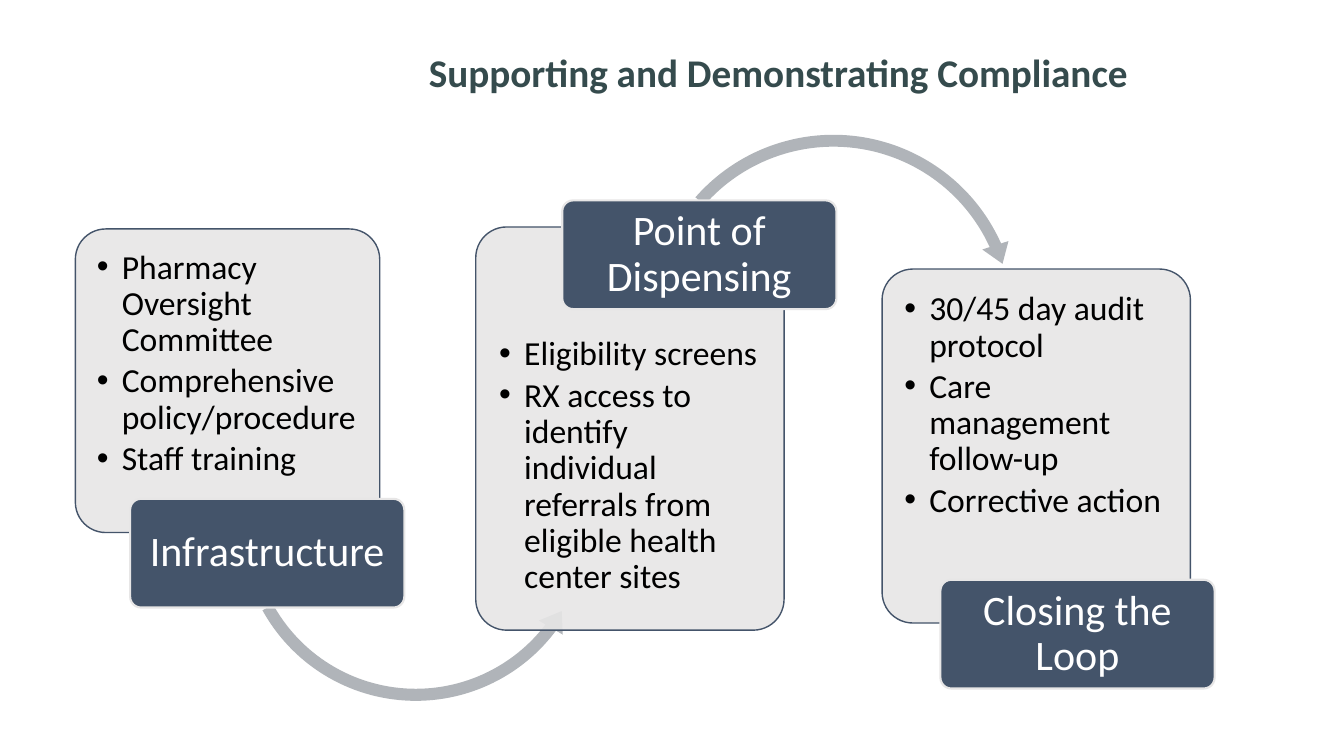
from lxml.etree import SubElement
from pptx import Presentation
from pptx.dml.color import RGBColor
from pptx.enum.shapes import MSO_SHAPE
from pptx.enum.text import MSO_ANCHOR, MSO_AUTO_SIZE, PP_ALIGN
from pptx.oxml.ns import qn
from pptx.util import Cm, Pt

COMPARISON_LAYOUT = 4


def color(hex_code):
    return RGBColor.from_string(hex_code)


def write(paragraph, text, *, size, ink, bold=False, align=PP_ALIGN.LEFT, after=0, bullet=None):
    properties = paragraph._p.get_or_add_pPr()
    if bullet:
        properties.set("marL", str(Cm(0.63)))
        properties.set("indent", str(-Cm(0.63)))
        SubElement(properties, qn("a:buChar")).set("char", bullet)
    paragraph.alignment = align
    paragraph.line_spacing = 0.9
    paragraph.space_before = Pt(0)
    paragraph.space_after = Pt(after)
    run = paragraph.add_run()
    run.text = text
    run.font.name = "Calibri"
    run.font.size = Pt(size)
    run.font.bold = bold
    run.font.color.rgb = color(ink)


class ComplianceSlide:
    navy = "44546A"
    pale = "E7E6E6"
    gray = "B0B4B9"
    heading = "354B4D"

    def __init__(self, deck):
        self.slide = deck.slides.add_slide(deck.slide_layouts[COMPARISON_LAYOUT])
        self.shapes = self.slide.shapes
        self.list_slots = [p for p in self.slide.placeholders if p.placeholder_format.idx in (1, 2, 3, 4)]

    def place(self, holder, box, anchor):
        holder.left, holder.top, holder.width, holder.height = map(Cm, box)
        frame = holder.text_frame
        frame.word_wrap = True
        frame.auto_size = MSO_AUTO_SIZE.NONE
        frame.vertical_anchor = anchor
        return frame

    def title(self, text, box):
        frame = self.place(self.shapes.title, box, MSO_ANCHOR.MIDDLE)
        write(frame.paragraphs[0], text, size=28, ink=self.heading, bold=True, align=PP_ALIGN.CENTER)

    def shape(self, preset, box, fill, line=None, width=1):
        shape = self.shapes.add_shape(preset, *map(Cm, box))
        shape.shadow.inherit = False
        shape.fill.solid()
        shape.fill.fore_color.rgb = color(fill)
        if line:
            shape.line.color.rgb = color(line)
            shape.line.width = Pt(width)
        else:
            shape.line.fill.background()
        return shape

    def panel(self, box):
        panel = self.shape(MSO_SHAPE.ROUNDED_RECTANGLE, box, self.pale, self.navy)
        panel.adjustments[0] = 0.1
        fill = panel.fill._xPr.find(qn("a:solidFill"))
        SubElement(fill[0], qn("a:alpha")).set("val", "90000")

    def bullets(self, items, box):
        holder = self.list_slots.pop(0)
        self.shapes._spTree.append(holder._element)
        frame = self.place(holder, box, MSO_ANCHOR.TOP)
        frame.margin_left = frame.margin_right = frame.margin_top = frame.margin_bottom = Cm(0.36)
        for index, item in enumerate(items):
            paragraph = frame.add_paragraph() if index else frame.paragraphs[0]
            write(paragraph, item, size=24, ink="000000", after=3.6, bullet="•")

    def arrow(self, preset, box, adjustments):
        arrow = self.shape(preset, box, self.gray)
        for index, value in enumerate(adjustments):
            arrow.adjustments[index] = value

    def tag(self, text, left, top):
        tag = self.shape(MSO_SHAPE.ROUNDED_RECTANGLE, (left, top, 6.91, 2.74), self.navy, self.pale, 1.5)
        tag.adjustments[0] = 0.1
        frame = tag.text_frame
        frame.word_wrap = True
        frame.vertical_anchor = MSO_ANCHOR.MIDDLE
        frame.margin_left = frame.margin_right = Cm(0.15)
        frame.margin_top = frame.margin_bottom = Cm(0.1)
        write(frame.paragraphs[0], text, size=30, ink="FFFFFF", align=PP_ALIGN.CENTER)

    def remove_unused(self):
        used = {shape.shape_id for shape in self.shapes if shape.has_text_frame and shape.text_frame.text}
        for holder in list(self.slide.placeholders):
            if holder.shape_id not in used:
                holder._element.getparent().remove(holder._element)


STAGES = [
    dict(
        name="Infrastructure", tag=(3.28, 12.57),
        panel=(1.9, 5.77, 7.67, 7.65), list=(2.08, 5.94, 7.32, 5.64),
        items=["Pharmacy Oversight Committee", "Comprehensive policy/procedure", "Staff training"],
        arrow=(MSO_SHAPE.LEFT_CIRCULAR_ARROW, (5.87, 8.64, 9.22, 9.22),
               (0.033, 4.036, 22.217, 90.671, 0.038)),
    ),
    dict(
        name="Point of Dispensing", tag=(14.17, 5.05),
        panel=(11.99, 5.72, 7.77, 10.16), list=(12.22, 8.13, 7.32, 7.54),
        items=["Eligibility screens",
               "RX access to identify individual referrals from eligible health center sites"],
        arrow=(MSO_SHAPE.CIRCULAR_ARROW, (16.18, 3.2, 9.65, 9.65),
               (0.031, 3.839, 201.416, 132.765, 0.036)),
    ),
    dict(
        name="Closing the Loop", tag=(23.7, 14.61),
        panel=(22.23, 6.78, 7.77, 8.92), list=(22.43, 6.99, 7.37, 6.6),
        items=["30/45 day audit protocol", "Care management follow-up", "Corrective action"],
        arrow=None,
    ),
]


def main():
    deck = Presentation()
    deck.slide_width, deck.slide_height = Cm(33.87), Cm(19.05)
    page = ComplianceSlide(deck)
    page.title("Supporting and Demonstrating Compliance", (6.86, 0.46, 25.5, 2.87))
    for stage in STAGES:
        page.panel(stage["panel"])
        page.bullets(stage["items"], stage["list"])
        if stage["arrow"]:
            page.arrow(*stage["arrow"])
        page.tag(stage["name"], *stage["tag"])
    page.remove_unused()
    deck.save("out.pptx")


if __name__ == "__main__":
    main()
